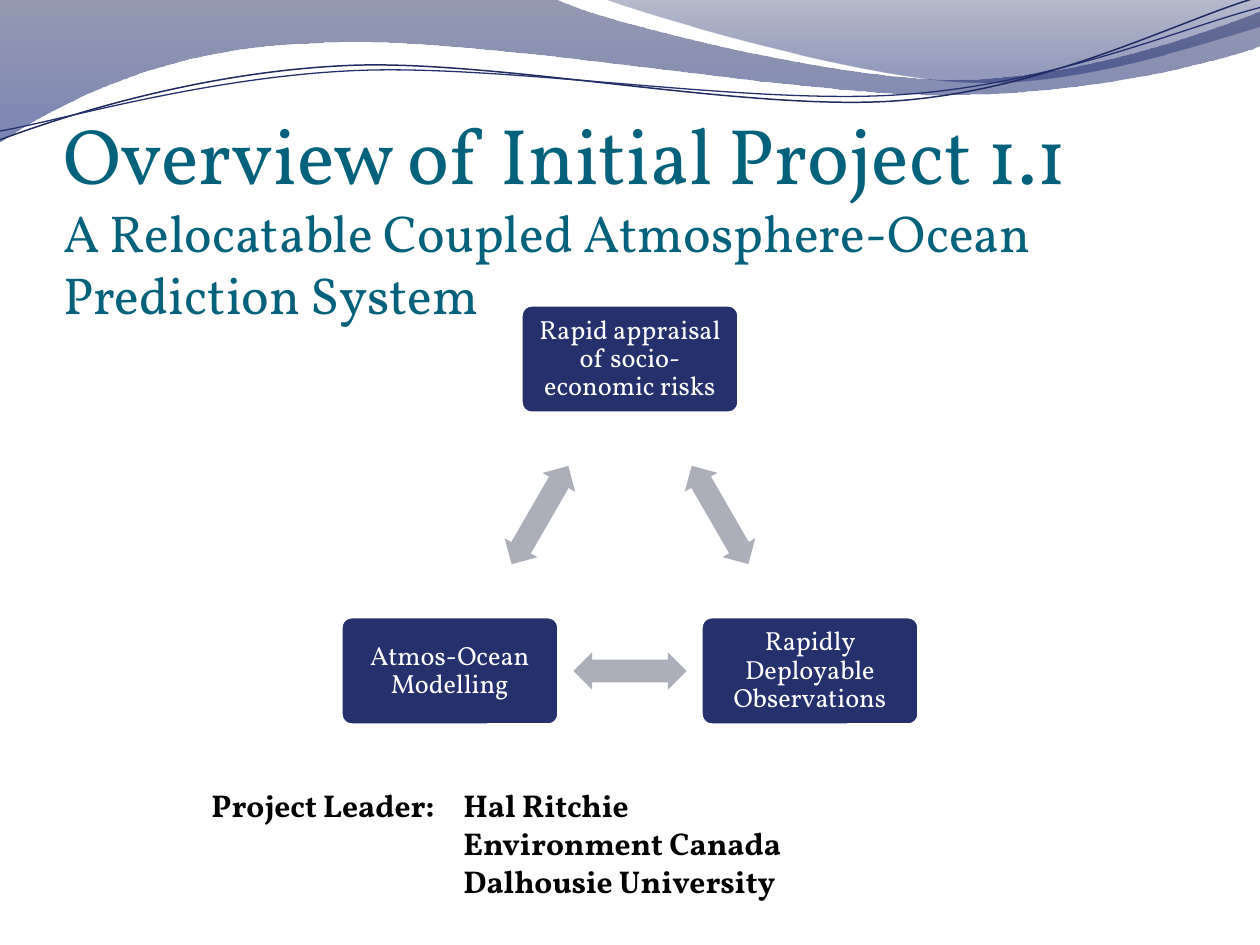
from dataclasses import dataclass
from math import cos, radians, sin
from typing import Any, NamedTuple, Optional

from lxml import etree
from pptx import Presentation
from pptx import util as u
from pptx.dml.color import RGBColor
from pptx.enum import shapes, text
from pptx.oxml.ns import qn

WIDTH, HEIGHT = 10, 7.5


@dataclass(frozen=True)
class Theme:
    font: str = "Vollkorn"
    title: str = "04617B"
    box: str = "24316D"
    arrow: str = "ACAEBA"
    white: str = "FFFFFF"
    black: str = "000000"
    title_size: float = 45
    subtitle_size: float = 29.7
    box_size: float = 15
    leader_size: float = 18


class Stop(NamedTuple):
    position: float
    color: str
    opacity: int


class Stroke(NamedTuple):
    color: str
    width: float


@dataclass(frozen=True)
class Wave:
    """An outline of points (x, y) and Bézier segments (x1, y1, x2, y2, x, y)."""
    start: tuple
    segments: list
    stops: Optional[list] = None
    stroke: Optional[Stroke] = None


class Node(NamedTuple):
    label: str
    angle: float


THEME = Theme()

WAVES = [
    Wave((0, 0), [(4.4, -0.01), (4.76, 0.17, 6.64, 0.63, 7.58, 0.63),
                  (8.53, 0.63, 9.58, 0.26, 10, 0.09), (10.01, 0.36),
                  (9.83, 0.44, 8.7, 0.76, 7.46, 0.75),
                  (6.22, 0.75, 3.82, 0.28, 2.57, 0.34),
                  (1.29, 0.36, 0.46, 0.83, -0.01, 1.13)],
         stops=[Stop(0, "152156", 45), Stop(1, "0E2175", 55)]),
    Wave((4.79, -0.01), [(5.09, 0.11, 6.82, 0.62, 7.69, 0.65),
                         (8.56, 0.69, 9.61, 0.32, 10, 0.21), (10, 0)],
         stops=[Stop(0, "131F59", 30), Stop(0.8, "13236D", 45)]),
    Wave((0, 1.11), [(0.48, 0.93, 1.58, 0.57, 2.77, 0.52),
                     (3.95, 0.47, 5.93, 0.89, 7.13, 0.8),
                     (8.33, 0.71, 9.38, 0.15, 9.98, -0.02)],
         stroke=Stroke("202B60", 0.85)),
    Wave((0, 1.04), [(0.47, 0.96, 1.64, 0.61, 2.83, 0.56),
                     (4.03, 0.51, 5.97, 0.84, 7.17, 0.75),
                     (8.36, 0.67, 9.41, 0.21, 10, 0.06)],
         stroke=Stroke("24316D", 0.75)),
]

NODES = [Node("Rapid appraisal of socio-economic risks", -90),
         Node("Rapidly Deployable Observations", 30),
         Node("Atmos-Ocean Modelling", 150)]
CYCLE_CENTER = (WIDTH / 2, HEIGHT * 0.6)
CYCLE_RADIUS = HEIGHT * 0.22
BOX_SIZE = (1.73, 0.86)
ARROW_SIZE = (0.9, 0.3)

LEADER = ["Project Leader: \tHal Ritchie", "Environment Canada", "Dalhousie University"]
LEADER_INDENT = 2


def set_all(obj: Any, values: dict) -> None:
    for name, value in values.items():
        setattr(obj, name, value)


def style(r: Any, size: float, color: str, bold: bool = False) -> None:
    set_all(r.font, {"name": THEME.font, "size": u.Pt(size), "bold": bold})
    r.font.color.rgb = RGBColor.from_string(color)


def set_insets(tf: Any, left: float, top: float, right: float, bottom: float) -> None:
    set_all(tf, {"margin_left": u.Inches(left), "margin_top": u.Inches(top),
                 "margin_right": u.Inches(right), "margin_bottom": u.Inches(bottom)})


def fill_solid(sp: Any, color: str) -> None:
    sp.shadow.inherit = False
    sp.fill.solid()
    sp.fill.fore_color.rgb = RGBColor.from_string(color)


def set_stroke(sp: Any, stroke: Stroke) -> None:
    sp.line.color.rgb = RGBColor.from_string(stroke.color)
    sp.line.width = u.Pt(stroke.width)


def fill_gradient(sp: Any, stops: list) -> None:
    """Fill from top to bottom with partly transparent stops."""
    sp.fill.gradient()
    sp.fill.gradient_angle = 270
    for target, stop in zip(sp.fill.gradient_stops, stops):
        target.position = stop.position
        target.color.rgb = RGBColor.from_string(stop.color)
    for clr, stop in zip(sp.element.spPr.iter(qn("a:srgbClr")), stops):
        etree.SubElement(clr, qn("a:alpha"), val=str(stop.opacity * 1000))


def bend(sp: Any, segments: list) -> None:
    """Merge the three lines through each segment's control points into one curve."""
    lines = iter(list(sp.element.spPr.iter(qn("a:lnTo"))))
    for segment in segments:
        first = next(lines)
        if len(segment) == 2:
            continue
        curve = etree.Element(qn("a:cubicBezTo"))
        first.addprevious(curve)
        for line in (first, next(lines), next(lines)):
            curve.append(line[0])
            line.getparent().remove(line)


def draw_wave(s: Any, wave: Wave) -> None:
    points = [(u.Inches(seg[i]), u.Inches(seg[i + 1]))
              for seg in wave.segments for i in range(0, len(seg), 2)]
    builder = s.shapes.build_freeform(*map(u.Inches, wave.start))
    builder.add_line_segments(points, close=wave.stops is not None)
    sp = builder.convert_to_shape()
    bend(sp, wave.segments)
    sp.shadow.inherit = False
    if wave.stops:
        fill_gradient(sp, wave.stops)
        sp.line.fill.background()
    else:
        sp.fill.background()
        set_stroke(sp, wave.stroke)


def draw_title(s: Any) -> None:
    sp = s.shapes.title
    s.shapes.element.append(sp.element)  # in front of the waves
    set_all(sp, {"left": u.Inches(0.5), "top": u.Inches(1.33),
                 "width": u.Inches(WIDTH * 0.9), "height": u.Inches(1.25)})
    tf = sp.text_frame
    set_all(tf, {"word_wrap": True, "auto_size": text.MSO_AUTO_SIZE.NONE,
                 "vertical_anchor": text.MSO_ANCHOR.BOTTOM})
    set_insets(tf, 0, 0.05, 0, 0)
    p = tf.paragraphs[0]
    p.alignment = text.PP_ALIGN.LEFT
    p.text = "Overview of Initial Project 1.1\vA Relocatable Coupled Atmosphere-Ocean Prediction System"
    for r, size in zip(p.runs, (THEME.title_size, THEME.subtitle_size)):
        style(r, size, THEME.title)


def add_centered(s: Any, kind: Any, center: tuple, size: tuple) -> Any:
    (x, y), (w, h) = center, size
    return s.shapes.add_shape(kind, *map(u.Inches, (x - w / 2, y - h / 2, w, h)))


def on_circle(angle: float, radius: float) -> tuple:
    x, y = CYCLE_CENTER
    return x + radius * cos(radians(angle)), y + radius * sin(radians(angle))


def draw_node(s: Any, node: Node) -> None:
    sp = add_centered(s, shapes.MSO_SHAPE.ROUNDED_RECTANGLE,
                      on_circle(node.angle, CYCLE_RADIUS), BOX_SIZE)
    sp.adjustments[0] = 0.1
    fill_solid(sp, THEME.box)
    set_stroke(sp, Stroke(THEME.white, 2))
    tf = sp.text_frame
    set_all(tf, {"word_wrap": True, "vertical_anchor": text.MSO_ANCHOR.MIDDLE})
    set_insets(tf, *[0.08] * 4)
    p = tf.paragraphs[0]
    set_all(p, {"text": node.label, "alignment": text.PP_ALIGN.CENTER, "line_spacing": 0.9})
    style(p.runs[0], THEME.box_size, THEME.white)


def draw_arrow_after(s: Any, node: Node) -> None:
    """Draw the arrow halfway from a node to the next one clockwise."""
    sp = add_centered(s, shapes.MSO_SHAPE.LEFT_RIGHT_ARROW,
                      on_circle(node.angle + 60, CYCLE_RADIUS / 2), ARROW_SIZE)
    sp.adjustments[0], sp.adjustments[1] = 0.6, 0.5
    sp.rotation = node.angle + 150
    fill_solid(sp, THEME.arrow)
    sp.line.fill.background()


def draw_leader(s: Any) -> None:
    tf = s.shapes.add_textbox(*map(u.Inches, (1.58, 6.19, WIDTH * 0.7, 1.31))).text_frame
    tf.word_wrap = True
    tf.text = "\n".join(LEADER)
    for p in tf.paragraphs:
        style(p.runs[0], THEME.leader_size, THEME.black, bold=True)
    for p in tf.paragraphs[1:]:
        p._p.get_or_add_pPr().set("marL", str(u.Inches(LEADER_INDENT)))


def main() -> None:
    prs = Presentation()
    set_all(prs, {"slide_width": u.Inches(WIDTH), "slide_height": u.Inches(HEIGHT)})
    s = prs.slides.add_slide(prs.slide_layouts[5])
    for wave in WAVES:
        draw_wave(s, wave)
    draw_title(s)
    for node in NODES:
        draw_node(s, node)
        draw_arrow_after(s, node)
    draw_leader(s)
    prs.save("out.pptx")


if __name__ == "__main__":
    main()
